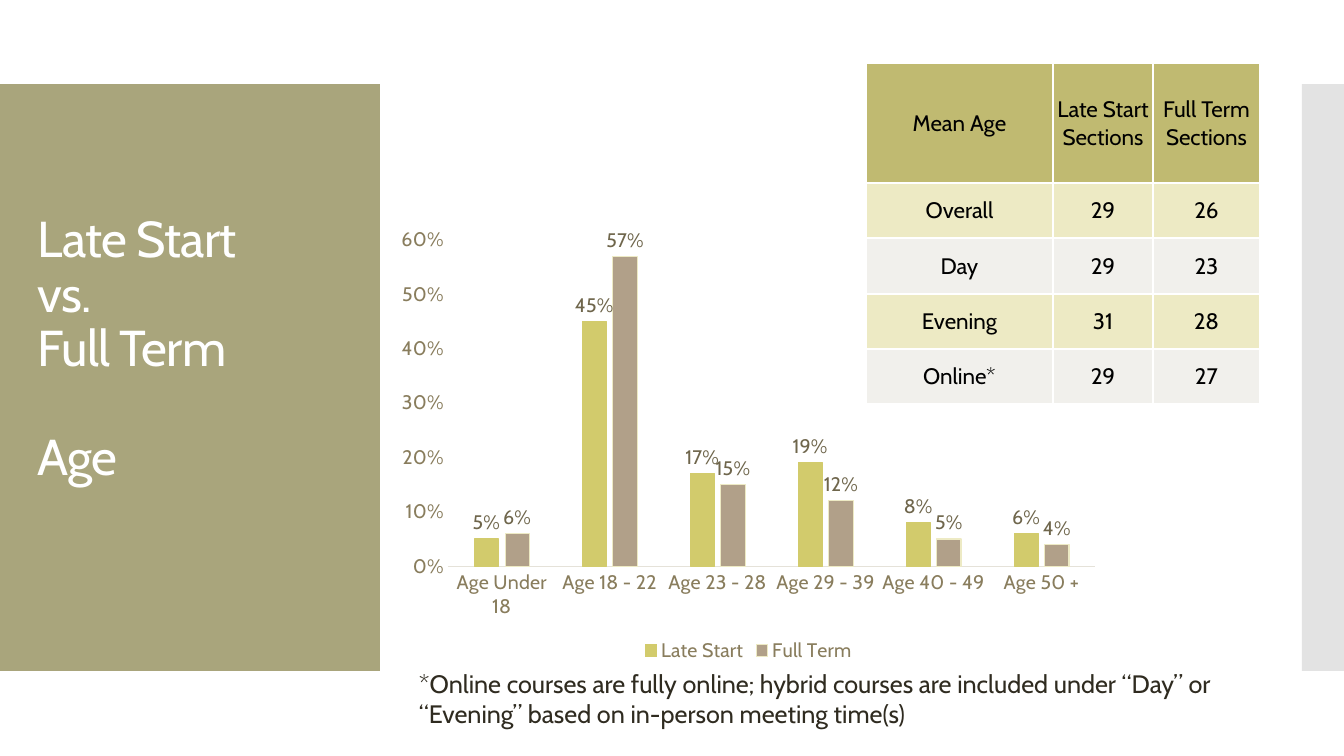
from lxml import etree
from pptx import Presentation
from pptx import util as u
from pptx.chart.data import CategoryChartData
from pptx.dml.color import RGBColor
from pptx.enum import chart as charts, shapes, text
from pptx.oxml import ns

COLORS = {
    "olive": "A9A57C", "grey": "C8C8C8", "white": "FFFFFF", "black": "000000",
    "ink": "2F2B20", "header": "C0BA71", "cream": "EDEAC4", "mist": "F1F0EC",
    "late": "D2CB6C", "full": "B1A089", "axis": "897D5D", "label": "6F664C",
    "baseline": "E5E2D9",
}
TITLE = ["Late Start", "vs.", "Full Term", "Age"]
FOOTNOTE = ("*Online courses are fully online; hybrid courses are included under “Day” or "
            "“Evening” based on in-person meeting time(s)")
MEAN_AGES = [
    ["Mean Age", "Late Start Sections", "Full Term Sections"],
    ["Overall", "29", "26"],
    ["Day", "29", "23"],
    ["Evening", "31", "28"],
    ["Online*", "29", "27"],
]
AGE_GROUPS = ["Age Under 18", "Age 18 - 22", "Age 23 - 28",
              "Age 29 - 39", "Age 40 - 49", "Age 50 +"]
AGE_SHARES = [
    ("Late Start", [0.05, 0.45, 0.17, 0.19, 0.08, 0.06], "late", "late"),
    ("Full Term", [0.06, 0.57, 0.15, 0.12, 0.05, 0.04], "full", "cream"),
]


def px(length):
    return u.Emu(round(length * 914400 / 100.8))


def rgb(color):
    return RGBColor.from_string(COLORS[color])


def add_xml(parent, tag, **attributes):
    return etree.SubElement(parent, ns.qn(tag), attributes)


class Painter:
    font_name = "Cabin"

    def __init__(self, deck):
        self.page = deck.slides.add_slide(deck.slide_layouts[6])

    def style(self, font, size, color):
        font.name = self.font_name
        font.size = u.Pt(size)
        font.bold = False
        font.color.rgb = rgb(color)

    def fill(self, target, color):
        target.fill.solid()
        target.fill.fore_color.rgb = rgb(color)

    def panel(self, bounds, color, opacity=100):
        box = self.page.shapes.add_shape(shapes.MSO_SHAPE.RECTANGLE, *map(px, bounds))
        box.shadow.inherit = False
        box.line.fill.background()
        self.fill(box, color)
        if opacity < 100:
            shade = box.fill._xPr.find(".//" + ns.qn("a:srgbClr"))
            add_xml(shade, "a:alpha", val=str(opacity * 1000))

    def text(self, bounds, lines, size, color, anchor=text.MSO_ANCHOR.TOP,
             line_spacing=None, tracking=None):
        frame = self.page.shapes.add_textbox(*map(px, bounds)).text_frame
        frame.word_wrap = True
        frame.vertical_anchor = anchor
        frame.text = "\n".join(lines)
        for para in frame.paragraphs:
            self.style(para.font, size, color)
            para.line_spacing = line_spacing
            if tracking:
                for span in para.runs:
                    span._r.get_or_add_rPr().set("spc", str(tracking))
        return frame

    def borders(self, cell, color):
        properties = cell._tc.get_or_add_tcPr()
        for position, side in enumerate(("a:lnL", "a:lnR", "a:lnT", "a:lnB")):
            line = etree.Element(ns.qn(side), w=str(u.Pt(1)))
            add_xml(add_xml(line, "a:solidFill"), "a:srgbClr", val=COLORS[color])
            properties.insert(position, line)

    def table(self, bounds, rows, widths, heights, size):
        grid = self.page.shapes.add_table(len(rows), len(widths), *map(px, bounds)).table
        grid.first_row = grid.horz_banding = False
        for column, width in zip(grid.columns, widths):
            column.width = px(width)
        for index, (row, height, values) in enumerate(zip(grid.rows, heights, rows)):
            row.height = px(height)
            color = "header" if index == 0 else ("mist", "cream")[index % 2]
            for cell, value in zip(row.cells, values):
                cell.text = value
                cell.vertical_anchor = text.MSO_ANCHOR.MIDDLE
                cell.margin_left = cell.margin_right = cell.margin_top = px(1)
                cell.margin_bottom = 0
                self.fill(cell, color)
                self.borders(cell, "white")
                para = cell.text_frame.paragraphs[0]
                para.alignment = text.PP_ALIGN.CENTER
                self.style(para.font, size, "black")

    def axis(self, axis, size):
        axis.has_major_gridlines = False
        axis.major_tick_mark = axis.minor_tick_mark = charts.XL_TICK_MARK.NONE
        self.style(axis.tick_labels.font, size, "axis")

    def columns(self, bounds, categories, series, size):
        data = CategoryChartData(number_format="0%")
        data.categories = categories
        for name, values, *_ in series:
            data.add_series(name, values)
        chart = self.page.shapes.add_chart(
            charts.XL_CHART_TYPE.COLUMN_CLUSTERED, *map(px, bounds), data).chart
        self.style(chart.font, 10, "ink")
        chart.has_title = False
        chart.has_legend = True
        chart.legend.position = charts.XL_LEGEND_POSITION.BOTTOM
        chart.legend.include_in_layout = False
        self.style(chart.legend.font, size, "axis")
        self.axis(chart.category_axis, size)
        chart.category_axis.format.line.color.rgb = rgb("baseline")
        chart.category_axis.format.line.width = u.Pt(0.75)
        values_axis = chart.value_axis
        self.axis(values_axis, size)
        values_axis.format.line.fill.background()
        values_axis.minimum_scale, values_axis.maximum_scale = 0, 0.6
        values_axis.major_unit = 0.1
        values_axis.tick_labels.number_format = "0%"
        values_axis.tick_labels.number_format_is_linked = False
        plot = chart.plots[0]
        plot.vary_by_categories = False
        plot.gap_width, plot.overlap = 219, -27
        for bars, (_, _, color, outline) in zip(plot.series, series):
            self.fill(bars.format, color)
            bars.format.line.color.rgb = rgb(outline)
            bars.format.line.width = u.Pt(0.75)
            labels = bars.data_labels
            labels.show_value = True
            labels.number_format = "0%"
            labels.number_format_is_linked = False
            labels.position = charts.XL_LABEL_POSITION.OUTSIDE_END
            self.style(labels.font, size, "label")


def main():
    deck = Presentation()
    deck.slide_width, deck.slide_height = px(1344), px(756)
    painter = Painter(deck)
    painter.panel((0, 84, 380, 587), "olive")
    painter.panel((1302, 84, 42, 587), "grey", opacity=50)
    title = painter.text((28, 124, 325, 453), TITLE, 36, "white",
                         text.MSO_ANCHOR.MIDDLE, line_spacing=0.9, tracking=-60)
    title.paragraphs[-1].space_before = u.Pt(39)
    painter.table((866, 63, 394, 341), MEAN_AGES, (187, 100, 107),
                  (120, 55, 56, 55, 55), 16)
    painter.text((409, 663, 851, 72), [FOOTNOTE], 18, "ink")
    painter.columns((387, 219, 723, 448), AGE_GROUPS, AGE_SHARES, 14)
    deck.save("out.pptx")


if __name__ == "__main__":
    main()
